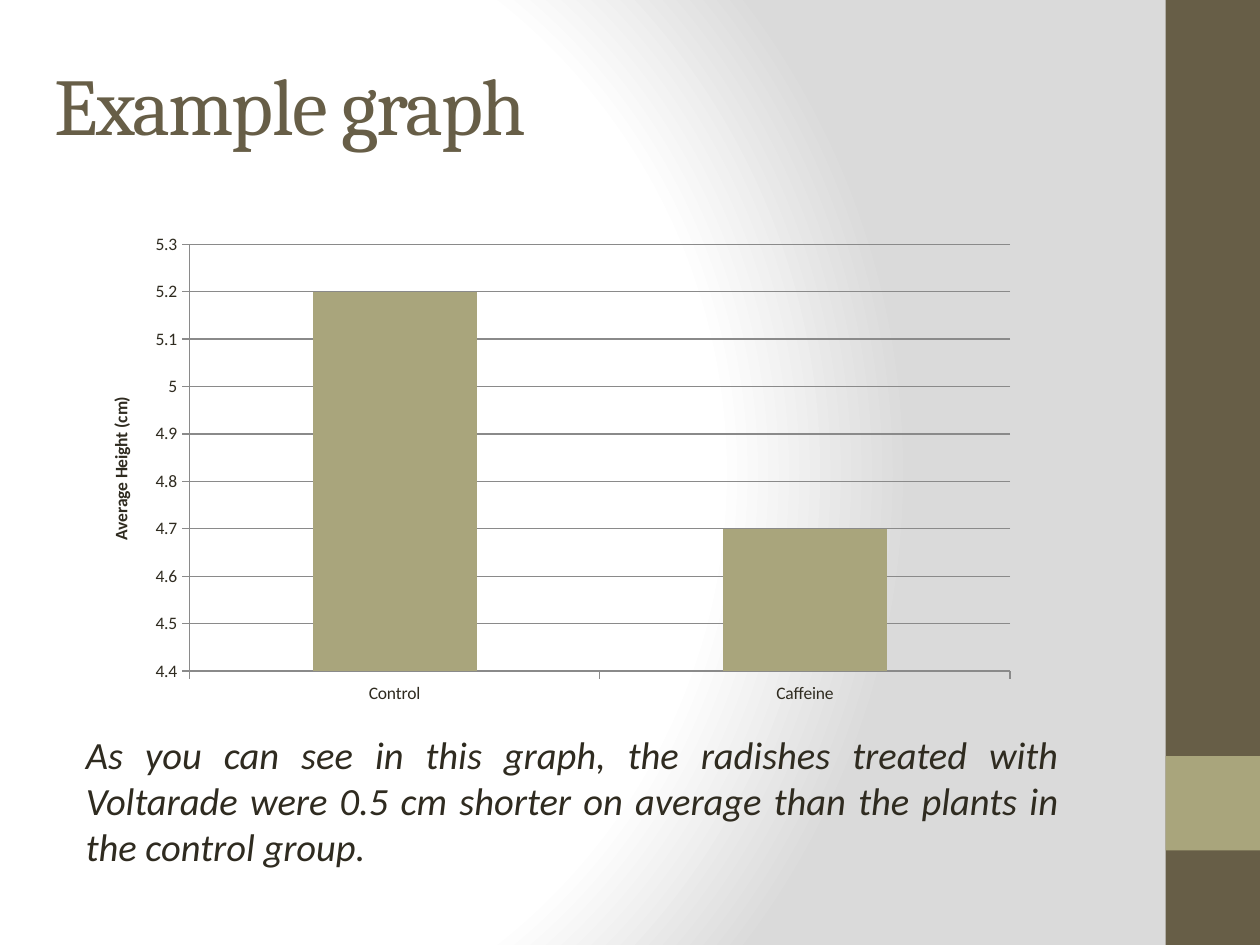
from dataclasses import dataclass

from pptx import Presentation
from pptx.chart.data import CategoryChartData
from pptx.dml.color import RGBColor
from pptx.enum.chart import XL_CHART_TYPE, XL_TICK_MARK
from pptx.enum.shapes import MSO_SHAPE
from pptx.enum.text import MSO_ANCHOR, PP_ALIGN
from pptx.oxml import parse_xml
from pptx.oxml.ns import nsdecls
from pptx.util import Inches, Pt

COLUMN = XL_CHART_TYPE.COLUMN_CLUSTERED
OUTSIDE = XL_TICK_MARK.OUTSIDE
RECT = MSO_SHAPE.RECTANGLE
TOP, MIDDLE = MSO_ANCHOR.TOP, MSO_ANCHOR.MIDDLE
LEFT, JUSTIFY = PP_ALIGN.LEFT, PP_ALIGN.JUSTIFY

COLS, ROWS = 120, 90
CELL = Inches(10) // COLS
COLORS = {
    "olive": "675E47",
    "sage": "A9A57C",
    "ink": "2F2B20",
    "grid": "8A8A8A",
    "white": "FFFFFF",
    "mist": "DADADA",
}
HEADING, BODY = "Cambria", "Calibri"


@dataclass(frozen=True)
class Box:
    """A place on the grid, in columns and rows."""
    col: float
    row: float
    cols: float
    rows: float

    def emu(self) -> list[int]:
        return [round(n * CELL) for n in (self.col, self.row, self.cols, self.rows)]


@dataclass(frozen=True)
class Band:
    box: Box
    color: str


BANDS = [
    Band(Box(111, 0, 9, ROWS), "olive"),
    Band(Box(111, 72, 9, 9), "sage"),
]


def rgb(name: str) -> RGBColor:
    return RGBColor.from_string(COLORS[name])


def set_background(s) -> None:
    """Fill the slide with a circular gradient centred on the left."""
    stops = "".join(
        f'<a:gs pos="{pos * 1000}"><a:srgbClr val="{COLORS[color]}"/></a:gs>'
        for pos, color in ((0, "white"), (75, "white"), (100, "mist")))
    bg = parse_xml(
        f'<p:bg {nsdecls("p", "a")}><p:bgPr><a:gradFill rotWithShape="1">'
        f'<a:gsLst>{stops}</a:gsLst><a:path path="circle">'
        '<a:fillToRect l="20000" t="50000" r="100000" b="50000"/></a:path>'
        '</a:gradFill><a:effectLst/></p:bgPr></p:bg>')
    s.element.cSld.insert(0, bg)


def add_band(s, band: Band) -> None:
    sp = s.shapes.add_shape(RECT, *band.box.emu())
    sp.shadow.inherit = False
    sp.fill.solid()
    sp.fill.fore_color.rgb = rgb(band.color)
    sp.line.fill.background()


def set_font(font, color: str, name: str, size: float,
             bold: bool = False, italic: bool = False) -> None:
    font.name, font.size = name, Pt(size)
    font.bold, font.italic = bold, italic
    font.color.rgb = rgb(color)


def add_text(s, box: Box, text: str, *, color: str, name: str, size: float,
             italic: bool = False, align=LEFT, anchor=TOP,
             spacing: float = 0, shadow: bool = False) -> None:
    tf = s.shapes.add_textbox(*box.emu()).text_frame
    tf.word_wrap = True
    tf.vertical_anchor = anchor
    p = tf.paragraphs[0]
    p.alignment = align
    r = p.add_run()
    r.text = text
    set_font(r.font, color, name, size, italic=italic)
    rPr = r._r.get_or_add_rPr()
    if spacing:
        rPr.set("spc", str(round(spacing * 100)))
    if shadow:
        rPr.find("{*}solidFill").addnext(parse_xml(
            f'<a:effectLst {nsdecls("a")}><a:outerShdw blurRad="38100" '
            'dist="38100" dir="2700000" algn="tl"><a:srgbClr val="000000">'
            '<a:alpha val="43000"/></a:srgbClr></a:outerShdw></a:effectLst>'))


def add_height_chart(s, box: Box) -> None:
    data = CategoryChartData()
    data.categories = ["Control", "Caffeine"]
    data.add_series("Series 1", [5.2, 4.7])
    chart = s.shapes.add_chart(COLUMN, *box.emu(), data).chart
    chart.has_legend = chart.has_title = False
    set_font(chart.font, "ink", BODY, 10)

    plot = chart.plots[0]
    plot.gap_width = 150
    plot.vary_by_categories = False
    fill = plot.series[0].format.fill
    fill.solid()
    fill.fore_color.rgb = rgb("sage")

    heights = chart.value_axis
    heights.minimum_scale, heights.maximum_scale = 4.4, 5.3
    heights.major_unit = 0.1
    heights.has_major_gridlines = True
    tf = heights.axis_title.text_frame
    tf.text = "Average Height (cm)"
    set_font(tf.paragraphs[0].runs[0].font, "ink", BODY, 10, bold=True)

    for axis in (chart.category_axis, heights):
        axis.major_tick_mark = OUTSIDE
    for part in (chart.category_axis, heights, heights.major_gridlines):
        part.format.line.color.rgb = rgb("grid")
        part.format.line.width = Pt(0.75)


def main() -> None:
    prs = Presentation()
    prs.slide_width, prs.slide_height = COLS * CELL, ROWS * CELL
    s = prs.slides.add_slide(prs.slide_layouts[6])
    set_background(s)
    for band in BANDS:
        add_band(s, band)
    add_text(s, Box(4, 3.6, 104, 12.4), "Example graph", color="olive",
             name=HEADING, size=46, anchor=MIDDLE, spacing=-1)
    add_text(s, Box(7, 69, 95, 14.5),
             "As you can see in this graph, the radishes treated with "
             "Voltarade were 0.5 cm shorter on average than the plants in "
             "the control group.",
             color="ink", name=BODY, size=22, italic=True, align=JUSTIFY,
             shadow=True)
    add_height_chart(s, Box(8, 21.4, 90, 46.5))
    prs.save("out.pptx")


if __name__ == "__main__":
    main()
